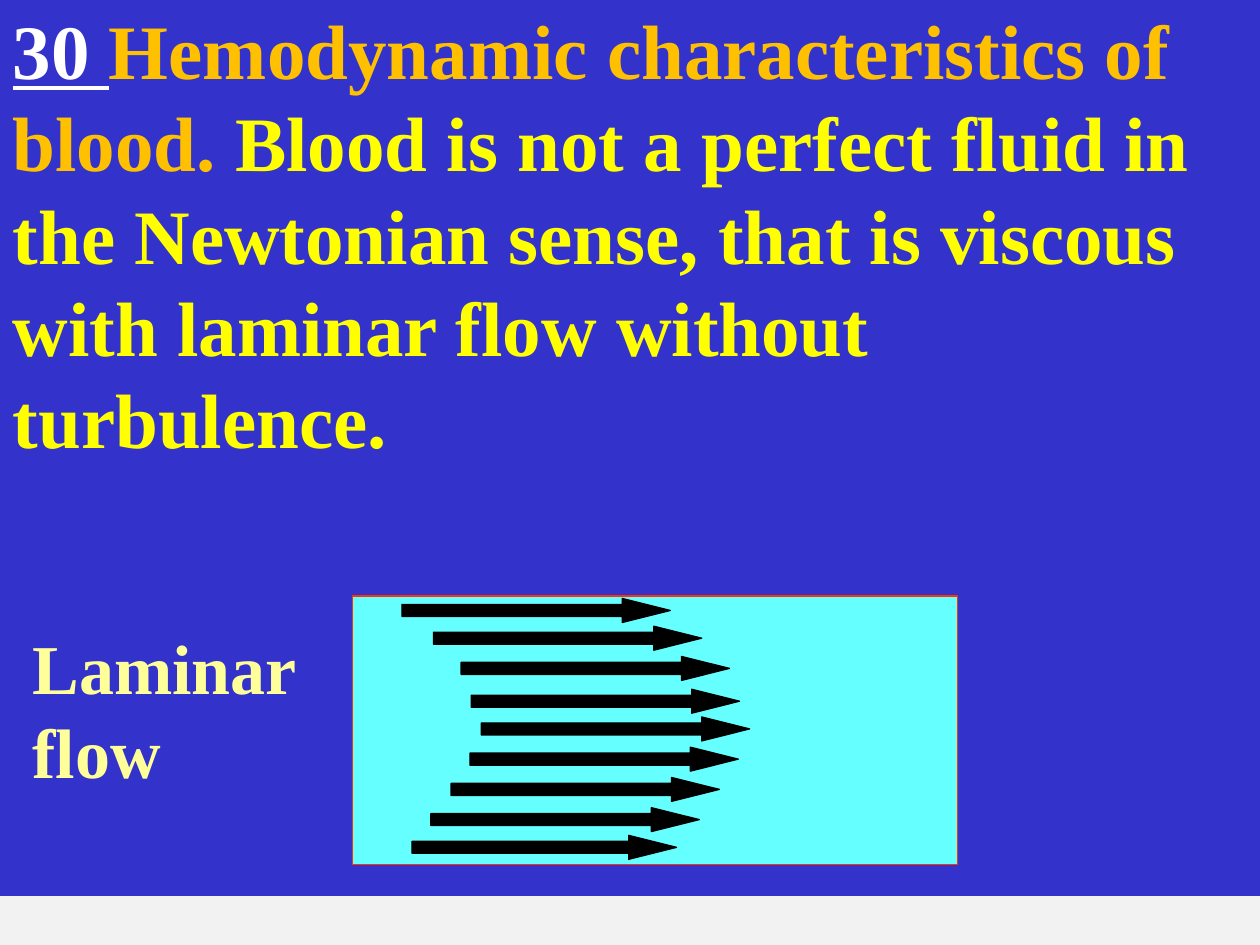
from pptx import Presentation
from pptx.dml.color import RGBColor
from pptx.enum.shapes import MSO_SHAPE as Shape
from pptx.enum.text import MSO_ANCHOR as Anchor, MSO_AUTO_SIZE as AutoSize, PP_ALIGN as Align
from pptx.util import Inches, Pt

WIDTH, HEIGHT = 10, 7.5
GREY = RGBColor(0xF2, 0xF2, 0xF2)
BLUE = RGBColor(0x33, 0x33, 0xCC)
CYAN = RGBColor(0x66, 0xFF, 0xFF)
RED = RGBColor(0xFF, 0x33, 0x00)
BLACK = RGBColor(0, 0, 0)
WHITE = RGBColor(0xFF, 0xFF, 0xFF)
ORANGE = RGBColor(0xFF, 0xC0, 0x00)
YELLOW = RGBColor(0xFF, 0xFF, 0x00)
PALE_YELLOW = RGBColor(0xFF, 0xFF, 0x99)

# Arrow offsets from the vessel's left and top, as seen from top to bottom
ARROW_OFFSETS = [(0.39, 0.02), (0.64, 0.24), (0.86, 0.48), (0.94, 0.74), (1.02, 0.96),
                 (0.93, 1.2), (0.78, 1.44), (0.62, 1.68), (0.47, 1.9)]
ARROW_LENGTH, LAST_ARROW_LENGTH, ARROW_HEIGHT = 2.13, 2.1, 0.19


def place(shape, box):
    for name, value in zip(("left", "top", "width", "height"), box):
        setattr(shape, name, Inches(value))


def write(shape, spans, size):
    """Fill a shape with one left-aligned paragraph of (text, colour, underline) spans."""
    frame = shape.text_frame
    frame_format = {"word_wrap": True, "auto_size": AutoSize.NONE, "vertical_anchor": Anchor.TOP}
    for name, value in frame_format.items():
        setattr(frame, name, value)
    para = frame.paragraphs[0]
    for name, value in {"alignment": Align.LEFT, "line_spacing": 1.0}.items():
        setattr(para, name, value)
    for text, colour, underline in spans:
        span = para.add_run()
        span.text = text
        font_format = {"name": "Times New Roman", "size": Pt(size), "bold": True,
                       "underline": underline}
        for name, value in font_format.items():
            setattr(span.font, name, value)
        span.font.color.rgb = colour


def add_block(page, kind, box, fill, line):
    block = page.shapes.add_shape(kind, *map(Inches, box))
    block.shadow.inherit = False
    block.fill.solid()
    block.fill.fore_color.rgb = fill
    block.line.color.rgb = line
    block.line.width = Pt(0.75)
    return block


def build_statement(page, box):
    panel = page.shapes.title
    place(panel, box)
    panel.fill.solid()
    panel.fill.fore_color.rgb = BLUE
    write(panel, [
        ("30 ", WHITE, True),
        ("Hemodynamic characteristics of blood. ", ORANGE, False),
        ("Blood is not a perfect fluid in the Newtonian sense, that is viscous "
         "with laminar flow without turbulence.", YELLOW, False),
    ], 44)


def build_vessel(page, box):
    add_block(page, Shape.RECTANGLE, box, CYAN, RED)
    left, top = box[:2]
    for index, (across, down) in enumerate(ARROW_OFFSETS, start=1):
        length = LAST_ARROW_LENGTH if index == len(ARROW_OFFSETS) else ARROW_LENGTH
        arrow = add_block(page, Shape.RIGHT_ARROW,
                          (left + across, top + down, length, ARROW_HEIGHT), BLACK, BLACK)
        arrow.adjustments[0], arrow.adjustments[1] = 0.5, 2


def build_label(page, box):
    label = page.shapes.add_textbox(*map(Inches, box))
    write(label, [("Laminar flow", PALE_YELLOW, False)], 40)


def main():
    deck = Presentation()
    deck.slide_width, deck.slide_height = Inches(WIDTH), Inches(HEIGHT)
    page = deck.slides.add_slide(deck.slide_layouts[5])
    page.background.fill.solid()
    page.background.fill.fore_color.rgb = GREY

    build_statement(page, (0, -0.03, WIDTH, 7.14))
    build_vessel(page, (0.28 * WIDTH, 4.73, 0.48 * WIDTH, 2.13))
    build_label(page, (0.16, 4.91, 2.77, 1.45))
    deck.save("out.pptx")


if __name__ == "__main__":
    main()
